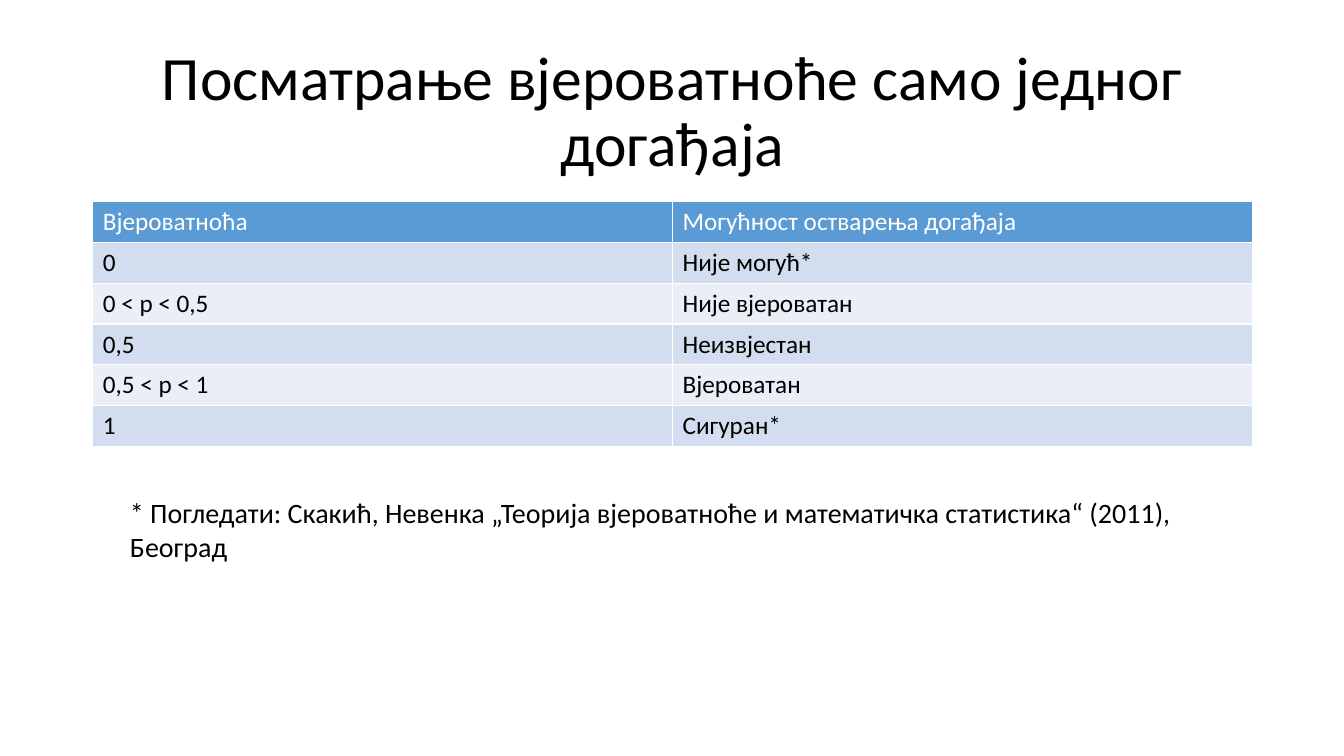
"""Build a slide on the probability of a single event."""
import pptx
import pptx.util
import pptx.dml.color
import pptx.enum.text

Inches = pptx.util.Inches
COLORS = {"ink": "000000", "paper": "FFFFFF", "head": "5B9BD5",
          "dark": "D2DEEF", "light": "EAEFF7"}
ROWS = [
    ("Вјероватноћа", "Могућност остварења догађаја"),
    ("0", "Није могућ*"),
    ("0 < p < 0,5", "Није вјероватан"),
    ("0,5", "Неизвјестан"),
    ("0,5 < p < 1", "Вјероватан"),
    ("1", "Сигуран*"),
]


def color(name):
    return pptx.dml.color.RGBColor.from_string(COLORS[name])


def style(para, size, name="ink"):
    font = para.font
    font.name = "Calibri"
    font.size = pptx.util.Pt(size)
    font.bold = False
    font.color.rgb = color(name)


def add_text(slide, box, text, size):
    shape = slide.shapes.add_textbox(*map(Inches, box))
    frame = shape.text_frame
    frame.word_wrap = True
    para = frame.paragraphs[0]
    para.text = text
    style(para, size)
    return frame


def add_title(slide, box, text):
    frame = add_text(slide, box, text, 44)
    frame.vertical_anchor = pptx.enum.text.MSO_ANCHOR.MIDDLE
    para = frame.paragraphs[0]
    para.alignment = pptx.enum.text.PP_ALIGN.CENTER
    para.line_spacing = 0.9


def add_grid(slide, box, rows):
    shape = slide.shapes.add_table(len(rows), len(rows[0]), *map(Inches, box))
    table = shape.table
    for i, row in enumerate(rows):
        fill = "head" if i == 0 else "dark" if i % 2 else "light"
        for j, text in enumerate(row):
            cell = table.cell(i, j)
            cell.text = text
            cell.fill.solid()
            cell.fill.fore_color.rgb = color(fill)
            style(cell.text_frame.paragraphs[0], 18, "ink" if i else "paper")


def add_note(slide, box, text):
    frame = add_text(slide, box, text, 20)
    frame.auto_size = pptx.enum.text.MSO_AUTO_SIZE.SHAPE_TO_FIT_TEXT


def main():
    deck = pptx.Presentation()
    deck.slide_width = Inches(13.33)
    deck.slide_height = Inches(7.5)
    slide = deck.slides.add_slide(deck.slide_layouts[6])
    add_title(slide, (0.92, 0.4, 11.5, 1.45),
              "Посматрање вјероватноће само једног догађаја")
    add_grid(slide, (0.92, 2, 11.5, 2.43), ROWS)
    add_note(slide, (1.19, 4.87, 10.85, 0.77),
             "* Погледати: Скакић, Невенка „Теорија вјероватноће и "
             "математичка статистика“ (2011), Београд")
    deck.save("out.pptx")


if __name__ == "__main__":
    main()
